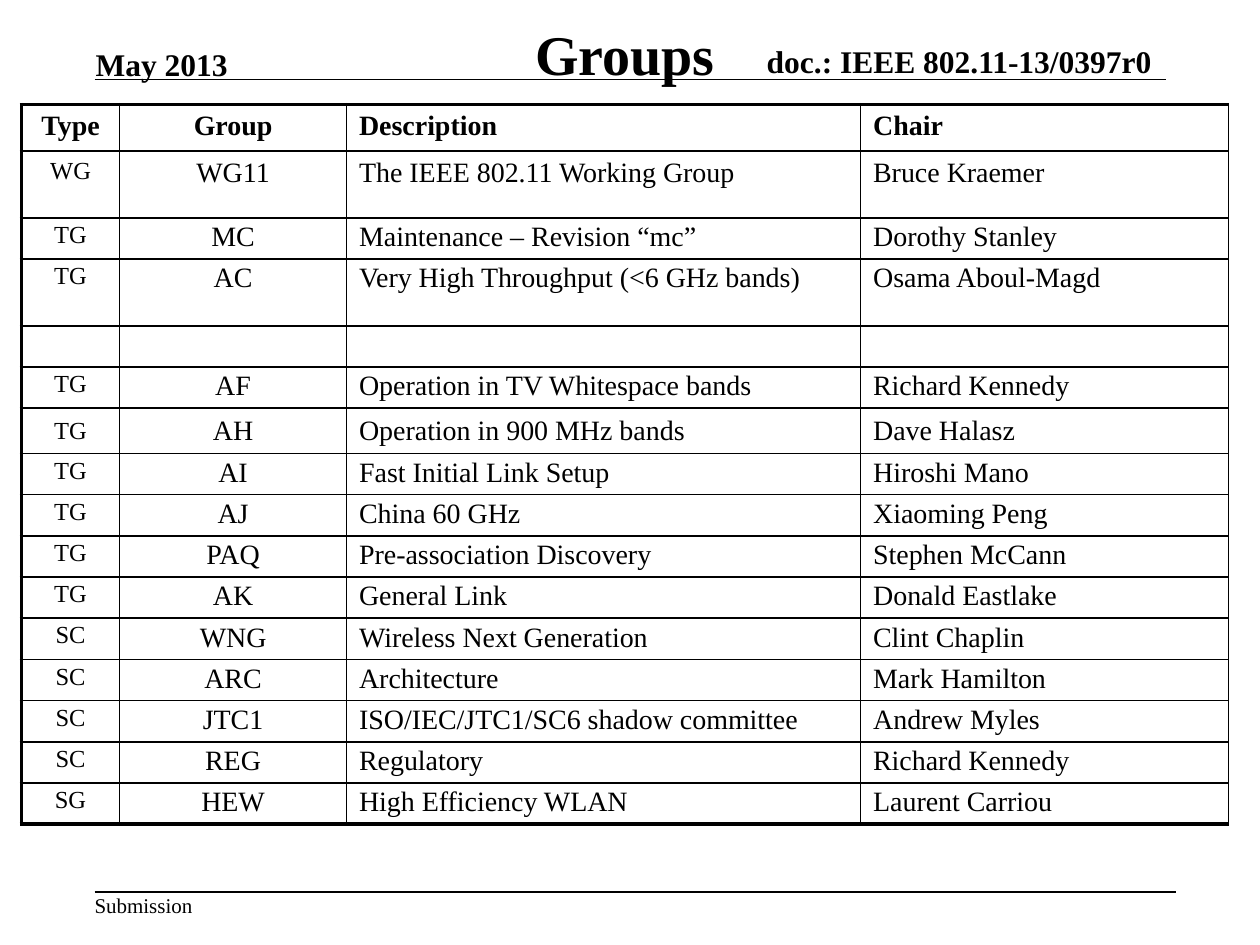
from lxml import etree
from pptx import Presentation
from pptx.dml.color import RGBColor
from pptx.enum import shapes, text
from pptx.oxml import ns
from pptx.util import Inches, Pt

BLACK = RGBColor(0x00, 0x00, 0x00)
LEFT, CENTER, RIGHT = text.PP_ALIGN.LEFT, text.PP_ALIGN.CENTER, text.PP_ALIGN.RIGHT
TOP, MIDDLE, BOTTOM = text.MSO_ANCHOR.TOP, text.MSO_ANCHOR.MIDDLE, text.MSO_ANCHOR.BOTTOM

HEADINGS = ("Type", "Group", "Description", "Chair")
GROUPS = [
    ("WG", "WG11", "The IEEE 802.11 Working Group", "Bruce Kraemer"),
    ("TG", "MC", "Maintenance – Revision “mc”", "Dorothy Stanley"),
    ("TG", "AC", "Very High Throughput (<6 GHz bands)", "Osama Aboul-Magd"),
    ("", "", "", ""),
    ("TG", "AF", "Operation in TV Whitespace bands", "Richard Kennedy"),
    ("TG", "AH", "Operation in 900 MHz bands", "Dave Halasz"),
    ("TG", "AI", "Fast Initial Link Setup", "Hiroshi Mano"),
    ("TG", "AJ", "China 60 GHz", "Xiaoming Peng"),
    ("TG", "PAQ", "Pre-association Discovery", "Stephen McCann"),
    ("TG", "AK", "General Link", "Donald Eastlake"),
    ("SC", "WNG", "Wireless Next Generation", "Clint Chaplin"),
    ("SC", "ARC", "Architecture", "Mark Hamilton"),
    ("SC", "JTC1", "ISO/IEC/JTC1/SC6 shadow committee", "Andrew Myles"),
    ("SC", "REG", "Regulatory", "Richard Kennedy"),
    ("SG", "HEW", "High Efficiency WLAN", "Laurent Carriou"),
]
COLUMN_WIDTHS = (0.78, 1.8, 4.08, 2.92)
TABLE_HEIGHT = 5.7
SPECIAL_HEIGHTS = {0: 0.37, 1: 0.53, 3: 0.53, 6: 0.36}
AH_ROW = 6


class SlideBuilder:
    font_name = "Times New Roman"
    thin, thick = 1, 2.25

    def __init__(self, slide):
        self.slide = slide

    def fill_paragraph(self, paragraph, content, size, bold=False, align=LEFT):
        paragraph.alignment = align
        if not content:
            etree.SubElement(paragraph._p, ns.qn("a:endParaRPr"), sz=str(size * 100))
            return
        run = paragraph.add_run()
        run.text = content
        run.font.name = self.font_name
        run.font.size = Pt(size)
        run.font.bold = bold
        run.font.color.rgb = BLACK

    def text_box(self, content, left, top, width, height, size, bold=False,
                 align=LEFT, anchor=TOP, wrap=False, margins=(0, 0)):
        box = self.slide.shapes.add_textbox(
            Inches(left), Inches(top), Inches(width), Inches(height))
        frame = box.text_frame
        frame.word_wrap = wrap
        frame.vertical_anchor = anchor
        frame.margin_left = frame.margin_right = Inches(margins[0])
        frame.margin_top = frame.margin_bottom = Inches(margins[1])
        self.fill_paragraph(frame.paragraphs[0], content, size, bold, align)

    def rule(self, left, right, y):
        line = self.slide.shapes.add_connector(
            shapes.MSO_CONNECTOR.STRAIGHT,
            Inches(left), Inches(y), Inches(right), Inches(y))
        line.line.color.rgb = BLACK
        line.line.width = Pt(self.thin)
        etree.SubElement(line._element.spPr, ns.qn("a:effectLst"))

    def borders(self, cell, **widths):
        """Draw the cell's edges; widths are points, keyed by L, R, T and B."""
        properties = cell._tc.get_or_add_tcPr()
        for side, width in widths.items():
            edge = etree.SubElement(
                properties, ns.qn(f"a:ln{side}"), w=str(int(Pt(width))))
            fill = etree.SubElement(edge, ns.qn("a:solidFill"))
            etree.SubElement(fill, ns.qn("a:srgbClr"), val=str(BLACK))

    def table(self, rows, left, top, column_widths, row_heights):
        table = self.slide.shapes.add_table(
            len(rows), len(column_widths), Inches(left), Inches(top),
            Inches(sum(column_widths)), Inches(sum(row_heights))).table
        table.first_row = table.horz_banding = False
        for column, width in zip(table.columns, column_widths):
            column.width = Inches(width)
        for row, height in zip(table.rows, row_heights):
            row.height = Inches(height)
        last = len(rows) - 1
        for r, row in enumerate(rows):
            for c, content in enumerate(row):
                cell = table.cell(r, c)
                cell.margin_left = cell.margin_right = Inches(0.1)
                cell.margin_top = cell.margin_bottom = Inches(0.05 if r < 2 else 0.03)
                cell.vertical_anchor = MIDDLE if r == AH_ROW else TOP
                self.borders(cell,
                             L=self.thick if c == 0 else self.thin,
                             R=self.thin,
                             T=self.thick if r == 0 else self.thin,
                             B=self.thick if r == last else self.thin)
                cell.fill.background()
                self.fill_paragraph(cell.text_frame.paragraphs[0], content,
                                    size=14 if c == 0 and r > 0 else 16,
                                    bold=r == 0, align=CENTER if c < 2 else LEFT)


def main():
    presentation = Presentation()
    presentation.slide_width, presentation.slide_height = Inches(10), Inches(7.5)
    builder = SlideBuilder(presentation.slides.add_slide(presentation.slide_layouts[6]))

    builder.text_box("doc.: IEEE 802.11-13/0397r0", 5.55, 0.33, 3.59, 0.3, 18,
                     bold=True, align=RIGHT, anchor=BOTTOM, wrap=True)
    builder.rule(0.75, 9.25, 0.63)
    builder.text_box("Submission", 0.75, 7.08, 0.78, 0.2, 12)
    builder.rule(0.75, 9.33, 7.08)
    builder.text_box("Groups", 0.5, 0.17, 8.92, 0.5, 32, bold=True,
                     align=CENTER, anchor=MIDDLE, wrap=True, margins=(0.1, 0.05))
    builder.text_box("May 2013", 0.76, 0.36, 1.06, 0.3, 18, bold=True, anchor=BOTTOM)

    rows = [HEADINGS, *GROUPS]
    plain_height = ((TABLE_HEIGHT - sum(SPECIAL_HEIGHTS.values()))
                    / (len(rows) - len(SPECIAL_HEIGHTS)))
    row_heights = [SPECIAL_HEIGHTS.get(r, plain_height) for r in range(len(rows))]
    builder.table(rows, 0.17, 0.83, COLUMN_WIDTHS, row_heights)
    presentation.save("out.pptx")


if __name__ == "__main__":
    main()
